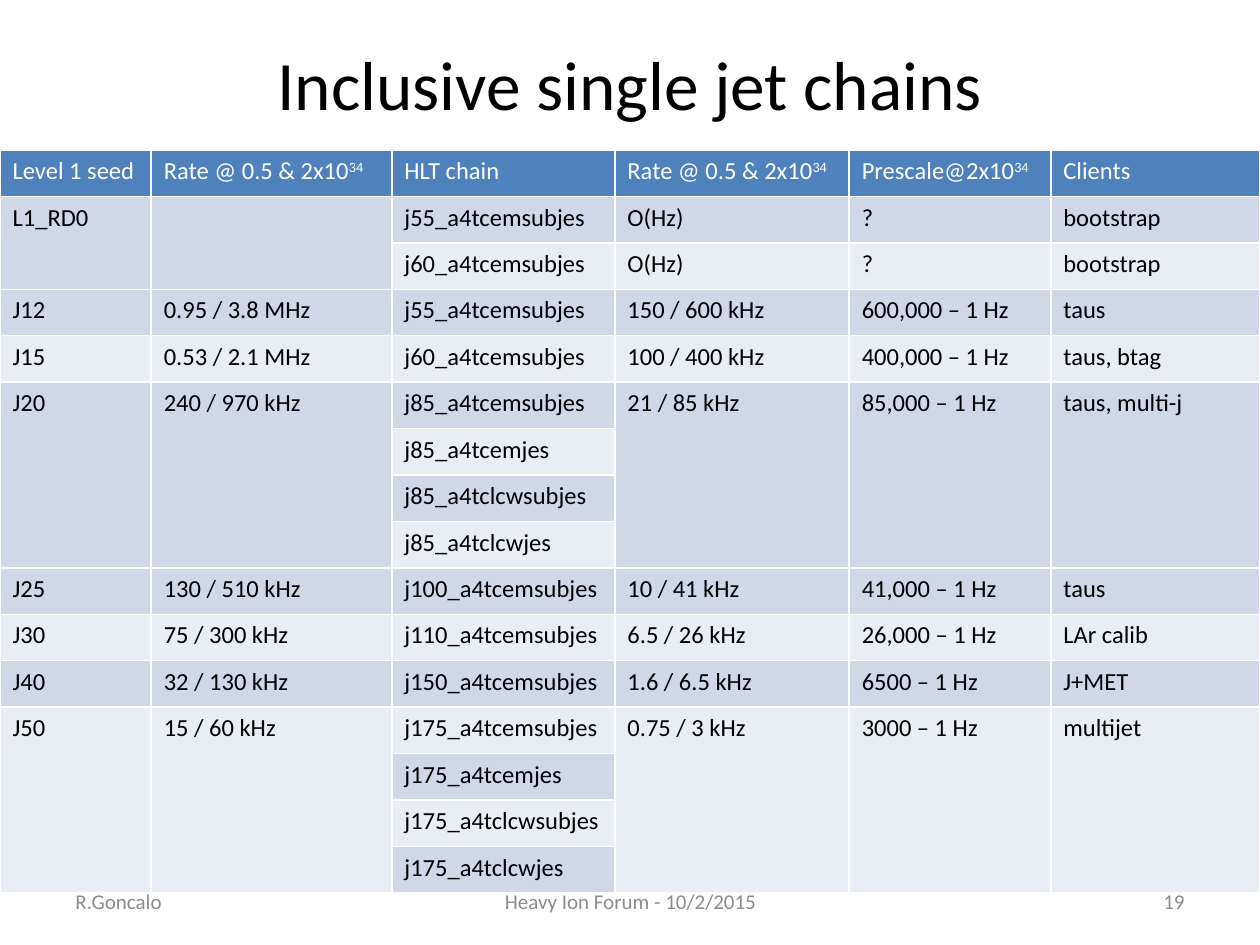
from pptx import Presentation
from pptx.dml.color import RGBColor
from pptx.enum.text import MSO_ANCHOR, PP_ALIGN
from pptx.util import Inches, Pt

LEFT, MID, RIGHT = PP_ALIGN.LEFT, PP_ALIGN.CENTER, PP_ALIGN.RIGHT
CENTER = MSO_ANCHOR.MIDDLE
FACE = "Calibri"
BLACK, WHITE, GREY = "000000", "FFFFFF", "8C8C8C"
BLUE, BANDS = "4F81BD", ("D0D8E8", "E9EDF4")

WIDTHS = (1.2, 1.91, 1.77, 1.86, 1.6, 1.66)
HEIGHT = 5.9
CHAIN = 2
RATE = ("Rate @ 0.5 & 2x10", "34")
HEAD = (("Level 1 seed",), RATE, ("HLT chain",), RATE,
        ("Prescale@2x10", "34"), ("Clients",))
ROWS = (
    ("L1_RD0", "", "j55_a4tcemsubjes", "O(Hz)", "?", "bootstrap"),
    (None, None, "j60_a4tcemsubjes", "O(Hz)", "?", "bootstrap"),
    ("J12", "0.95 / 3.8 MHz", "j55_a4tcemsubjes", "150 / 600 kHz", "600,000 – 1 Hz", "taus"),
    ("J15", "0.53 / 2.1 MHz", "j60_a4tcemsubjes", "100 / 400 kHz", "400,000 – 1 Hz", "taus, btag"),
    ("J20", "240 / 970 kHz", "j85_a4tcemsubjes", "21 / 85 kHz", "85,000 – 1 Hz", "taus, multi-j"),
    (None, None, "j85_a4tcemjes", None, None, None),
    (None, None, "j85_a4tclcwsubjes", None, None, None),
    (None, None, "j85_a4tclcwjes", None, None, None),
    ("J25", "130 / 510 kHz", "j100_a4tcemsubjes", "10 / 41 kHz", "41,000 – 1 Hz", "taus"),
    ("J30", "75 / 300 kHz", "j110_a4tcemsubjes", "6.5 / 26 kHz", "26,000 – 1 Hz", "LAr calib"),
    ("J40", "32 / 130 kHz", "j150_a4tcemsubjes", "1.6 / 6.5 kHz", "6500 – 1 Hz", "J+MET"),
    ("J50", "15 / 60 kHz", "j175_a4tcemsubjes", "0.75 / 3 kHz", "3000 – 1 Hz", "multijet"),
    (None, None, "j175_a4tcemjes", None, None, None),
    (None, None, "j175_a4tclcwsubjes", None, None, None),
    (None, None, "j175_a4tclcwjes", None, None, None),
)


def color(code):
    return RGBColor.from_string(code)


def style(para, size, code):
    font = para.font
    font.name, font.size, font.bold = FACE, Pt(size), False
    font.color.rgb = color(code)


def add_label(slide, text, box, size, code, align):
    frame = slide.shapes.add_textbox(*map(Inches, box)).text_frame
    frame.word_wrap = True
    frame.vertical_anchor = CENTER
    para = frame.paragraphs[0]
    para.text, para.alignment = text, align
    style(para, size, code)


def fill_cell(cell, parts, fill, code):
    cell.fill.solid()
    cell.fill.fore_color.rgb = color(fill)
    para = cell.text_frame.paragraphs[0]
    style(para, 14, code)
    for part, base in zip(parts, (0, 30000)):
        if part:
            run = para.add_run()
            run.text = part
            if base:
                run.font._element.set("baseline", str(base))


def merge_gaps(table):
    count = len(ROWS)
    for col in range(len(WIDTHS)):
        starts = [i for i, row in enumerate(ROWS) if row[col] is not None]
        for top, end in zip(starts, starts[1:] + [count]):
            if end - top > 1:
                table.cell(top + 1, col).merge(table.cell(end, col))


def add_grid(slide):
    count = len(ROWS) + 1
    table = slide.shapes.add_table(
        count, len(WIDTHS), 0, Inches(1.19), Inches(10), Inches(HEIGHT)).table
    for col, width in zip(table.columns, WIDTHS):
        col.width = Inches(width)
    for row in table.rows:
        row.height = Inches(HEIGHT / count)
    for col, parts in enumerate(HEAD):
        fill_cell(table.cell(0, col), parts, BLUE, WHITE)
    for i, row in enumerate(ROWS):
        for col, text in enumerate(row):
            fill_cell(table.cell(i + 1, col), (text,), BANDS[i % 2], BLACK)
    merge_gaps(table)


def main():
    deck = Presentation()
    deck.slide_width, deck.slide_height = Inches(10), Inches(7.5)
    slide = deck.slides.add_slide(deck.slide_layouts[6])
    add_label(slide, "Inclusive single jet chains", (0.5, 0.3, 9, 0.71), 39.6, BLACK, MID)
    add_grid(slide)
    for text, left, width, align in (
            ("R.Goncalo", 0.5, 2.33, LEFT),
            ("Heavy Ion Forum - 10/2/2015", 3.42, 3.17, MID),
            ("19", 7.17, 2.33, RIGHT)):
        add_label(slide, text, (left, 6.95, width, 0.4), 12, GREY, align)
    deck.save("out.pptx")


if __name__ == "__main__":
    main()
